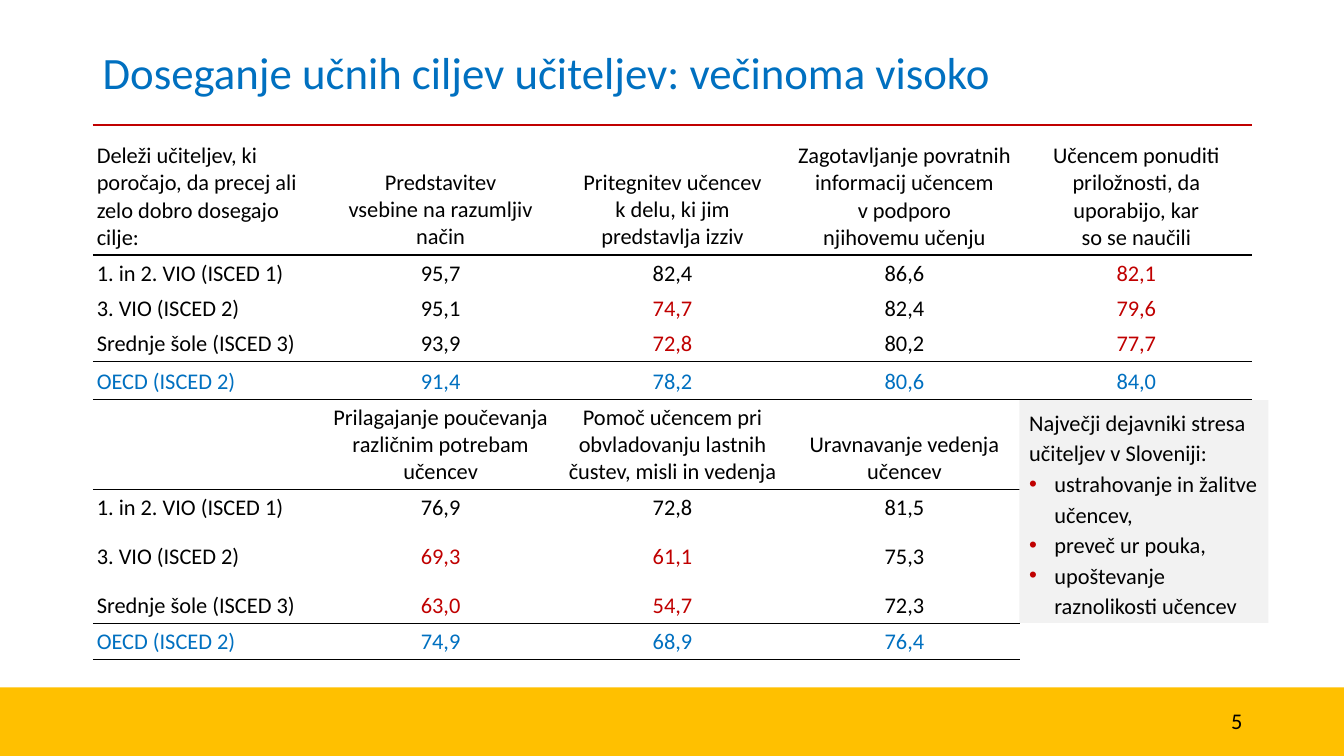
from lxml import etree
from pptx import Presentation
from pptx.dml.color import RGBColor
from pptx.enum.shapes import MSO_CONNECTOR, MSO_SHAPE
from pptx.enum.text import MSO_ANCHOR, PP_ALIGN
from pptx.oxml.ns import qn
from pptx.util import Inches, Pt

LEFT, CENTER, RIGHT = PP_ALIGN.LEFT, PP_ALIGN.CENTER, PP_ALIGN.RIGHT
TOP, MIDDLE, BOTTOM = MSO_ANCHOR.TOP, MSO_ANCHOR.MIDDLE, MSO_ANCHOR.BOTTOM
RECTANGLE, STRAIGHT = MSO_SHAPE.RECTANGLE, MSO_CONNECTOR.STRAIGHT

FONT = "Calibri"
BLACK, RED, BLUE, AMBER, GREY = "000000", "C00000", "0070C0", "FFC000", "F2F2F2"
SLIDE_WIDTH, SLIDE_HEIGHT = 13.33, 7.5
MARGIN = 0.92
CONTENT_WIDTH = 11.5
FOOTER_TOP = 6.82

LEVELS = ["1. in 2. VIO (ISCED 1)", "3. VIO (ISCED 2)", "Srednje šole (ISCED 3)", "OECD (ISCED 2)"]
UPPER_HEADER = [
    "Deleži učiteljev, ki poročajo, da precej ali zelo dobro dosegajo cilje:",
    "Predstavitev\nvsebine na razumljiv način",
    "Pritegnitev učencev\nk delu, ki jim\npredstavlja izziv",
    "Zagotavljanje povratnih informacij učencem\nv podporo\nnjihovemu učenju",
    "Učencem ponuditi priložnosti, da uporabijo, kar\nso se naučili",
]
UPPER_SHARES = [
    ["95,7", "82,4", "86,6", "82,1"],
    ["95,1", "74,7", "82,4", "79,6"],
    ["93,9", "72,8", "80,2", "77,7"],
    ["91,4", "78,2", "80,6", "84,0"],
]
LOWER_HEADER = [
    "",
    "Prilagajanje poučevanja različnim potrebam učencev",
    "Pomoč učencem pri obvladovanju lastnih čustev, misli in vedenja",
    "Uravnavanje vedenja učencev",
    "",
]
LOWER_SHARES = [
    ["76,9", "72,8", "81,5", ""],
    ["69,3", "61,1", "75,3", ""],
    ["63,0", "54,7", "72,3", ""],
    ["74,9", "68,9", "76,4", ""],
]
ROW_HEIGHTS = [1.16, 0.36, 0.35, 0.35, 0.37, 0.9, 0.35, 0.49, 0.49, 0.35]
RED_CELLS = {(1, 4), (2, 2), (2, 4), (3, 2), (3, 4), (7, 1), (7, 2), (8, 1), (8, 2)}
OECD_ROWS = (4, 9)
RULED_COLUMNS = {0: 5, 3: 5, 4: 5, 5: 4, 8: 4, 9: 4}
STRESS_FACTORS = ["ustrahovanje in žalitve učencev,", "preveč ur pouka,", "upoštevanje raznolikosti učencev"]


def color(value):
    """Turn a hex string into a colour."""
    return RGBColor.from_string(value)


def add_run(paragraph, text, size=16, ink=BLACK):
    """Append one formatted run to a paragraph."""
    run = paragraph.add_run()
    run.text = text
    run.font.name = FONT
    run.font.size = Pt(size)
    run.font.color.rgb = color(ink)


def add_rectangle(slide, box, fill):
    """Draw a plain filled rectangle."""
    shape = slide.shapes.add_shape(RECTANGLE, *map(Inches, box))
    shape.shadow.inherit = False
    shape.fill.solid()
    shape.fill.fore_color.rgb = color(fill)
    shape.line.fill.background()
    return shape


def add_label(slide, box, text, size, ink, alignment):
    """Place a single vertically centred line of text."""
    frame = slide.shapes.add_textbox(*map(Inches, box)).text_frame
    frame.word_wrap = True
    frame.vertical_anchor = MIDDLE
    paragraph = frame.paragraphs[0]
    paragraph.alignment = alignment
    add_run(paragraph, text, size, ink)
    return paragraph


def add_heading(slide, box):
    """Place the title and the red rule below it."""
    left, top, width, height = box
    title = add_label(slide, box, "Doseganje učnih ciljev učiteljev: večinoma visoko", 32, BLUE, LEFT)
    title.line_spacing = 0.9
    rule_top = Inches(top + height + 0.16)
    rule = slide.shapes.add_connector(STRAIGHT, Inches(left), rule_top, Inches(left + width), rule_top)
    rule.line.color.rgb = color(RED)
    rule.line.width = Pt(2)
    etree.SubElement(rule._element.spPr, qn("a:effectLst"))


def is_ruled(row, column):
    """Tell whether a line runs below the given cell."""
    return column < RULED_COLUMNS.get(row, 0)


def set_borders(cell, row, column):
    """Draw the horizontal rules of a cell and hide its other borders."""
    visible = {"a:lnT": is_ruled(row - 1, column), "a:lnB": is_ruled(row, column)}
    properties = cell._tc.get_or_add_tcPr()
    for position, side in enumerate(("a:lnL", "a:lnR", "a:lnT", "a:lnB")):
        border = etree.Element(qn(side), w=str(Pt(1)))
        if visible.get(side):
            fill = etree.SubElement(border, qn("a:solidFill"))
            etree.SubElement(fill, qn("a:srgbClr"), val=BLACK)
        else:
            etree.SubElement(border, qn("a:noFill"))
        properties.insert(position, border)


def fill_cell(cell, text, row, column):
    """Write and format one table cell."""
    cell.fill.background()
    cell.vertical_anchor = BOTTOM
    cell.margin_left = cell.margin_right = cell.margin_top = cell.margin_bottom = Inches(0.04)
    ink = BLUE if row in OECD_ROWS else RED if (row, column) in RED_CELLS else BLACK
    frame = cell.text_frame
    for index, line in enumerate(text.split("\n")):
        paragraph = frame.add_paragraph() if index else frame.paragraphs[0]
        paragraph.alignment = CENTER if column else LEFT
        if line:
            add_run(paragraph, line, ink=ink)
        else:
            etree.SubElement(paragraph._p, qn("a:endParaRPr"), sz="1600")
    set_borders(cell, row, column)


def add_goals_table(slide, left, top, width):
    """Build the table with both groups of teaching goals."""
    rows = []
    for header, shares in ((UPPER_HEADER, UPPER_SHARES), (LOWER_HEADER, LOWER_SHARES)):
        rows.append(header)
        rows.extend([level, *values] for level, values in zip(LEVELS, shares))
    columns = len(UPPER_HEADER)
    box = map(Inches, (left, top, width, sum(ROW_HEIGHTS)))
    table = slide.shapes.add_table(len(rows), columns, *box).table
    table.first_row = table.horz_banding = False
    for column in table.columns:
        column.width = Inches(width / columns)
    for row, (height, texts) in enumerate(zip(ROW_HEIGHTS, rows)):
        table.rows[row].height = Inches(height)
        for column, text in enumerate(texts):
            fill_cell(table.cell(row, column), text, row, column)


def add_bullet(paragraph):
    """Give a paragraph a hanging red bullet."""
    properties = paragraph._p.get_or_add_pPr()
    properties.set("marL", str(Inches(0.25)))
    properties.set("indent", str(-Inches(0.25)))
    bullet_color = etree.SubElement(properties, qn("a:buClr"))
    etree.SubElement(bullet_color, qn("a:srgbClr"), val=RED)
    etree.SubElement(properties, qn("a:buFont"), typeface="Arial")
    etree.SubElement(properties, qn("a:buChar"), char="•")


def add_stress_panel(slide, box):
    """Place the grey panel that lists the stress factors."""
    frame = add_rectangle(slide, box, GREY).text_frame
    frame.word_wrap = True
    frame.vertical_anchor = TOP
    for index, text in enumerate(["Največji dejavniki stresa učiteljev v Sloveniji:", *STRESS_FACTORS]):
        paragraph = frame.add_paragraph() if index else frame.paragraphs[0]
        paragraph.alignment = LEFT
        paragraph.line_spacing = 1.14
        if index:
            add_bullet(paragraph)
        add_run(paragraph, text)


def add_footer(slide, top):
    """Draw the amber band with the slide number."""
    add_rectangle(slide, (0, top, SLIDE_WIDTH, SLIDE_HEIGHT - top), AMBER)
    number_width = 0.88
    number_left = MARGIN + CONTENT_WIDTH - number_width
    add_label(slide, (number_left, top + 0.13, number_width, 0.4), "5", 16, BLACK, RIGHT)


def main():
    """Build and save the presentation."""
    presentation = Presentation()
    presentation.slide_width = Inches(SLIDE_WIDTH)
    presentation.slide_height = Inches(SLIDE_HEIGHT)
    slide = presentation.slides.add_slide(presentation.slide_layouts[6])
    add_footer(slide, FOOTER_TOP)
    add_heading(slide, (MARGIN, 0.4, CONTENT_WIDTH, 0.68))
    add_goals_table(slide, MARGIN, 1.37, CONTENT_WIDTH)
    add_stress_panel(slide, (10.11, 3.97, 2.47, 2.21))
    presentation.save("out.pptx")


if __name__ == "__main__":
    main()
